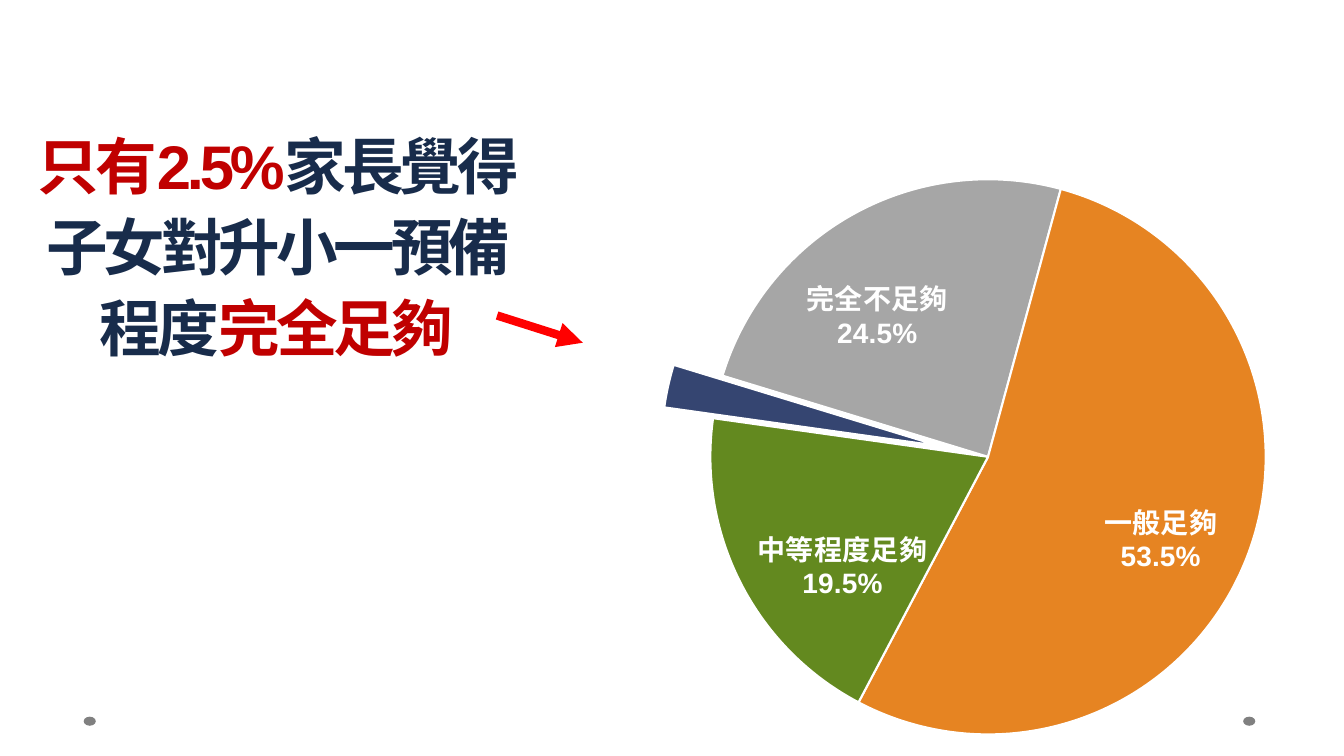
from lxml import etree
from pptx import Presentation
from pptx.chart.data import CategoryChartData
from pptx.dml.color import RGBColor
from pptx.enum.chart import XL_CHART_TYPE, XL_LABEL_POSITION
from pptx.enum.shapes import MSO_CONNECTOR, MSO_SHAPE
from pptx.enum.text import MSO_ANCHOR, MSO_AUTO_SIZE, PP_ALIGN
from pptx.oxml import parse_xml
from pptx.oxml.ns import nsdecls, qn
from pptx.util import Inches, Pt

CENTER = PP_ALIGN.CENTER
BOTTOM = MSO_ANCHOR.BOTTOM
NO_AUTOFIT = MSO_AUTO_SIZE.NONE
PIE = XL_CHART_TYPE.PIE
LABEL_CENTER = XL_LABEL_POSITION.CENTER
STRAIGHT = MSO_CONNECTOR.STRAIGHT
ELLIPSE = MSO_SHAPE.OVAL

COLORS = {
    "navy": "182C4B", "dark red": "C00000", "red": "FF0000",
    "dot": "808080", "white": "FFFFFF", "black": "000000",
    "gray": "A6A6A6", "orange": "E68422", "green": "63891F", "blue": "354571",
}
TITLE_RUNS = [
    ("只有2.5%", "dark red"),
    ("家長覺得子女對升小一預備程度", "navy"),
    ("完全足夠", "dark red"),
]
# category, share, colour, label shift as a fraction of the chart (None: no label)
SLICES = [
    ("完全不足夠", 0.245, "gray", (-0.04, -0.03)),
    ("一般足夠", 0.535, "orange", (0.04, 0.04)),
    ("中等程度足夠", 0.195, "green", (-0.02, 0.06)),
    ("完全足夠", 0.025, "blue", None),
]
EXPLODED_SLICE, EXPLOSION = 3, 18
FIRST_ANGLE = 287
PLOT_AREA = {"x": 0.27, "y": 0.15, "w": 0.51, "h": 0.76}
TITLE_BOX = (0.11, 0.84, 5.26, 2.82)
CHART_BOX = (4.13, 0.68, 10.8, 7.27)
ARROW = (4.93, 3.13, 5.78, 3.4)
DOT_LEFTS = (0.83, 12.33)


def color(name):
    return RGBColor.from_string(COLORS[name])


def inches(values):
    return [Inches(value) for value in values]


def format_font(font, size, fill, name="Arial", bold=True):
    font.size, font.bold, font.name = Pt(size), bold, name
    font.color.rgb = color(fill)


def add_text(paragraph, text, spacing=0, **font_format):
    """Append a run; spacing is the character spacing in points."""
    run = paragraph.add_run()
    run.text = text
    format_font(run.font, **font_format)
    run.font._element.set("spc", str(spacing * 100))


def manual_layout(**settings):
    items = "".join(f'<c:{key} val="{value}"/>' for key, value in settings.items())
    return parse_xml(f'<c:layout {nsdecls("c")}><c:manualLayout>{items}'
                     "</c:manualLayout></c:layout>")


def add_title(slide):
    title = slide.shapes.title
    title.left, title.top, title.width, title.height = inches(TITLE_BOX)
    frame = title.text_frame
    frame.word_wrap = True
    frame.auto_size = NO_AUTOFIT
    frame.vertical_anchor = BOTTOM
    paragraph = frame.paragraphs[0]
    paragraph.alignment = CENTER
    paragraph.line_spacing = Pt(58)
    for text, fill in TITLE_RUNS:
        add_text(paragraph, text, spacing=-3, size=44, fill=fill)


def add_dots(slide):
    for left in DOT_LEFTS:
        dot = slide.shapes.add_shape(ELLIPSE, *inches((left, 7.11, 0.12, 0.09)))
        dot.shadow.inherit = False
        dot.fill.solid()
        dot.fill.fore_color.rgb = color("dot")
        dot.line.fill.background()


def style_labels(plot):
    plot.has_data_labels = True
    labels = plot.data_labels
    labels.show_category_name = labels.show_value = True
    labels.show_percentage = labels.show_legend_key = False
    labels.number_format, labels.number_format_is_linked = "0.0%", False
    labels.position = LABEL_CENTER
    format_font(labels.font, 20, "white")
    separator = etree.Element(qn("c:separator"))
    separator.text = "\n"
    labels._element.find(qn("c:showBubbleSize")).addnext(separator)


def place_label(label_list, index, shift):
    """Move one label off its slice's centre, or delete it when shift is None."""
    label = etree.Element(qn("c:dLbl"))
    etree.SubElement(label, qn("c:idx")).set("val", str(index))
    if shift is None:
        etree.SubElement(label, qn("c:delete")).set("val", "1")
    else:
        label.append(manual_layout(x=shift[0], y=shift[1]))
        for child in label_list:
            if child.tag not in (qn("c:dLbl"), qn("c:showLeaderLines")):
                label.append(parse_xml(etree.tostring(child)))
    label_list.insert(index, label)


def add_pie(slide):
    data = CategoryChartData(number_format="0.0%")
    data.categories = [category for category, *_ in SLICES]
    data.add_series("Series 1", [share for _, share, *_ in SLICES])
    chart = slide.shapes.add_chart(PIE, *inches(CHART_BOX), data).chart
    chart.has_legend = chart.has_title = False
    format_font(chart.font, 10, "black", "TeX Gyre Pagella", False)

    plot = chart.plots[0]
    plot.vary_by_categories = True
    style_labels(plot)
    series = plot.series[0]
    label_list = plot.data_labels._element
    series._element.find(qn("c:cat")).addprevious(label_list)
    for index, (_, _, fill, shift) in enumerate(SLICES):
        point = series.points[index]
        point.format.fill.solid()
        point.format.fill.fore_color.rgb = color(fill)
        point.format.line.color.rgb = color("white")
        point.format.line.width = Pt(1.5)
        place_label(label_list, index, shift)

    explosion = etree.Element(qn("c:explosion"))
    explosion.set("val", str(EXPLOSION))
    exploded = series._element.findall(qn("c:dPt"))[EXPLODED_SLICE]
    exploded.find(qn("c:spPr")).addprevious(explosion)

    pie = plot._element
    for old_angle in pie.findall(qn("c:firstSliceAng")):
        pie.remove(old_angle)
    etree.SubElement(pie, qn("c:firstSliceAng")).set("val", str(FIRST_ANGLE))

    plot_area = pie.getparent()
    for old_layout in plot_area.findall(qn("c:layout")):
        plot_area.remove(old_layout)
    plot_area.insert(0, manual_layout(layoutTarget="inner", xMode="edge",
                                      yMode="edge", **PLOT_AREA))


def add_arrow(slide):
    arrow = slide.shapes.add_connector(STRAIGHT, *inches(ARROW))
    arrow.line.color.rgb = color("red")
    arrow.line.width = Pt(6)
    etree.SubElement(arrow.line._get_or_add_ln(), qn("a:tailEnd")).set("type", "triangle")
    etree.SubElement(arrow._element.spPr, qn("a:effectLst"))


def main():
    presentation = Presentation()
    presentation.slide_width, presentation.slide_height = inches((13.33, 7.5))
    slide = presentation.slides.add_slide(presentation.slide_layouts[5])
    add_dots(slide)
    add_title(slide)
    add_pie(slide)
    add_arrow(slide)
    presentation.save("out.pptx")


if __name__ == "__main__":
    main()
